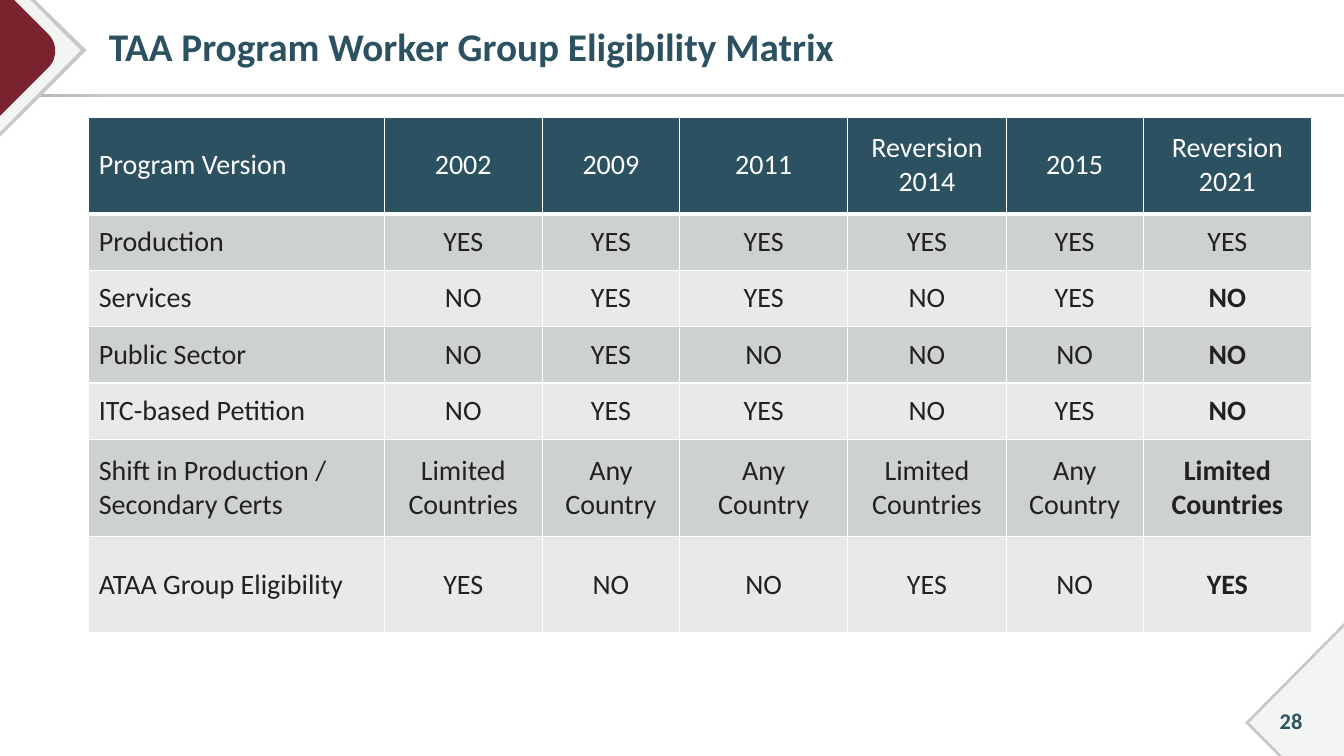
from dataclasses import dataclass

from lxml import etree
from pptx import Presentation
from pptx.dml.color import RGBColor
from pptx.enum.shapes import MSO_SHAPE
from pptx.enum.text import MSO_ANCHOR, PP_ALIGN
from pptx.oxml.ns import qn
from pptx.slide import Slide
from pptx.table import _Cell
from pptx.text.text import _Paragraph
from pptx.util import Inches, Pt

RECT = MSO_SHAPE.RECTANGLE
MIDDLE = MSO_ANCHOR.MIDDLE
LEFT, CENTER = PP_ALIGN.LEFT, PP_ALIGN.CENTER
FONT = "Calibri"
COLORS = {
    "teal": "2C5261", "red": "7A232F", "edge": "C8C8C6", "shade": "ABABA8",
    "pale": "F3F4F4", "ink": "242021", "white": "FFFFFF",
    "dark": "CDD1D2", "light": "E8E9EA",
}
WIDTHS = [2.93, 1.57, 1.36, 1.67, 1.57, 1.36, 1.67]
HEIGHTS = [0.96, 0.56, 0.56, 0.56, 0.56, 0.96, 0.96]
LIMIT, ANY = "Limited\nCountries", "Any\nCountry"
ROWS = [
    ["Program Version", "2002", "2009", "2011", "Reversion 2014", "2015", "Reversion 2021"],
    ["Production"] + ["YES"] * 6,
    ["Services", "NO", "YES", "YES", "NO", "YES", "NO"],
    ["Public Sector", "NO", "YES", "NO", "NO", "NO", "NO"],
    ["ITC-based Petition", "NO", "YES", "YES", "NO", "YES", "NO"],
    ["Shift in Production / Secondary Certs", LIMIT, ANY, ANY, LIMIT, ANY, LIMIT],
    ["ATAA Group Eligibility", "YES", "NO", "NO", "YES", "NO", "YES"],
]
Point = tuple[float, float]


@dataclass
class Facet:
    points: list[Point]
    color: str


@dataclass
class Label:
    text: str
    box: tuple[float, float, float, float]
    size: int
    align: PP_ALIGN
    inset: float = 0.1
    space: float = 1.0


def curve(a: Point, b: Point, c: Point, d: Point, steps: int = 12) -> list[Point]:
    spots = []
    for i in range(steps + 1):
        t = i / steps
        u = 1 - t
        mix = (u ** 3, 3 * u * u * t, 3 * u * t * t, t ** 3)
        x, y = (sum(m * p[k] for m, p in zip(mix, (a, b, c, d))) for k in (0, 1))
        spots.append((x, y))
    return spots


FACETS = [
    Facet([(0, 0), (0.35, 0), (0.86, 0.5), (0, 1.36)], "edge"),
    Facet([(0, 0), (0.3, 0), (0.8, 0.5), (0, 1.31)], "pale"),
    Facet([(0, 0), (0.14, 0),
           *curve((0.48, 0.34), (0.57, 0.43), (0.57, 0.58), (0.48, 0.67)),
           (0, 1.15)], "red"),
    Facet([(13.33, 6.18), (13.33, 7.5), (12.68, 7.5), (12.35, 7.17)], "edge"),
    Facet([(13.33, 6.22), (13.33, 7.5), (12.72, 7.5), (12.39, 7.17)], "pale"),
]
LABELS = [
    Label("TAA Program Worker Group Eligibility Matrix", (0.88, 0.05, 12.12, 0.86),
          28, LEFT, 0.2, 0.9),
    Label("28", (12.45, 6.95, 0.71, 0.4), 16, CENTER),
]


def paint(name: str) -> RGBColor:
    return RGBColor.from_string(COLORS[name])


def style(para: _Paragraph, size: int, color: str, bold: bool, align: PP_ALIGN) -> None:
    para.alignment = align
    font = para.font
    font.name, font.size, font.bold = FONT, Pt(size), bold
    font.color.rgb = paint(color)


def draw_rule(slide: Slide) -> None:
    rule = slide.shapes.add_shape(RECT, 0, Inches(0.93), Inches(13.33), Inches(0.03))
    rule.shadow.inherit = False
    rule.line.fill.background()
    rule.fill.gradient()
    rule.fill.gradient_angle = 0
    stops = rule.fill.gradient_stops
    for stop, place, color in zip(stops, (0, 0.08), ("shade", "edge")):
        stop.position = place
        stop.color.rgb = paint(color)


def draw_facet(slide: Slide, facet: Facet) -> None:
    points = [(Inches(x), Inches(y)) for x, y in facet.points]
    pen = slide.shapes.build_freeform(*points[0])
    pen.add_line_segments(points[1:], close=True)
    shape = pen.convert_to_shape()
    shape.shadow.inherit = False
    shape.fill.solid()
    shape.fill.fore_color.rgb = paint(facet.color)
    shape.line.fill.background()


def draw_label(slide: Slide, label: Label) -> None:
    frame = slide.shapes.add_textbox(*map(Inches, label.box)).text_frame
    frame.word_wrap = True
    frame.vertical_anchor = MIDDLE
    frame.margin_left = Inches(label.inset)
    para = frame.paragraphs[0]
    para.text = label.text
    para.line_spacing = label.space
    style(para, label.size, "teal", True, label.align)


def add_edges(cell: _Cell, base: int) -> None:
    props = cell._tc.get_or_add_tcPr()
    for i, (side, width) in enumerate(zip("LRTB", (1, 1, 1, base))):
        edge = etree.Element(qn(f"a:ln{side}"), w=str(Pt(width)))
        fill = etree.SubElement(edge, qn("a:solidFill"))
        etree.SubElement(fill, qn("a:srgbClr"), val=COLORS["white"])
        props.insert(i, edge)


def draw_table(slide: Slide) -> None:
    box = map(Inches, (0.88, 1.16, sum(WIDTHS), sum(HEIGHTS)))
    table = slide.shapes.add_table(len(ROWS), len(WIDTHS), *box).table
    for col, width in zip(table.columns, WIDTHS):
        col.width = Inches(width)
    for r, (row, height) in enumerate(zip(ROWS, HEIGHTS)):
        table.rows[r].height = Inches(height)
        head = r == 0
        back = "teal" if head else "dark" if r % 2 else "light"
        for c, text in enumerate(row):
            cell = table.cell(r, c)
            cell.text = text
            cell.vertical_anchor = MIDDLE
            cell.fill.solid()
            cell.fill.fore_color.rgb = paint(back)
            add_edges(cell, 3 if head else 1)
            bold = r > 1 and c == len(row) - 1
            for para in cell.text_frame.paragraphs:
                style(para, 20, "white" if head else "ink", bold, CENTER if c else LEFT)


def main() -> None:
    deck = Presentation()
    deck.slide_width, deck.slide_height = Inches(13.33), Inches(7.5)
    slide = deck.slides.add_slide(deck.slide_layouts[6])
    draw_rule(slide)
    for facet in FACETS:
        draw_facet(slide, facet)
    draw_table(slide)
    for label in LABELS:
        draw_label(slide, label)
    deck.save("out.pptx")


if __name__ == "__main__":
    main()
